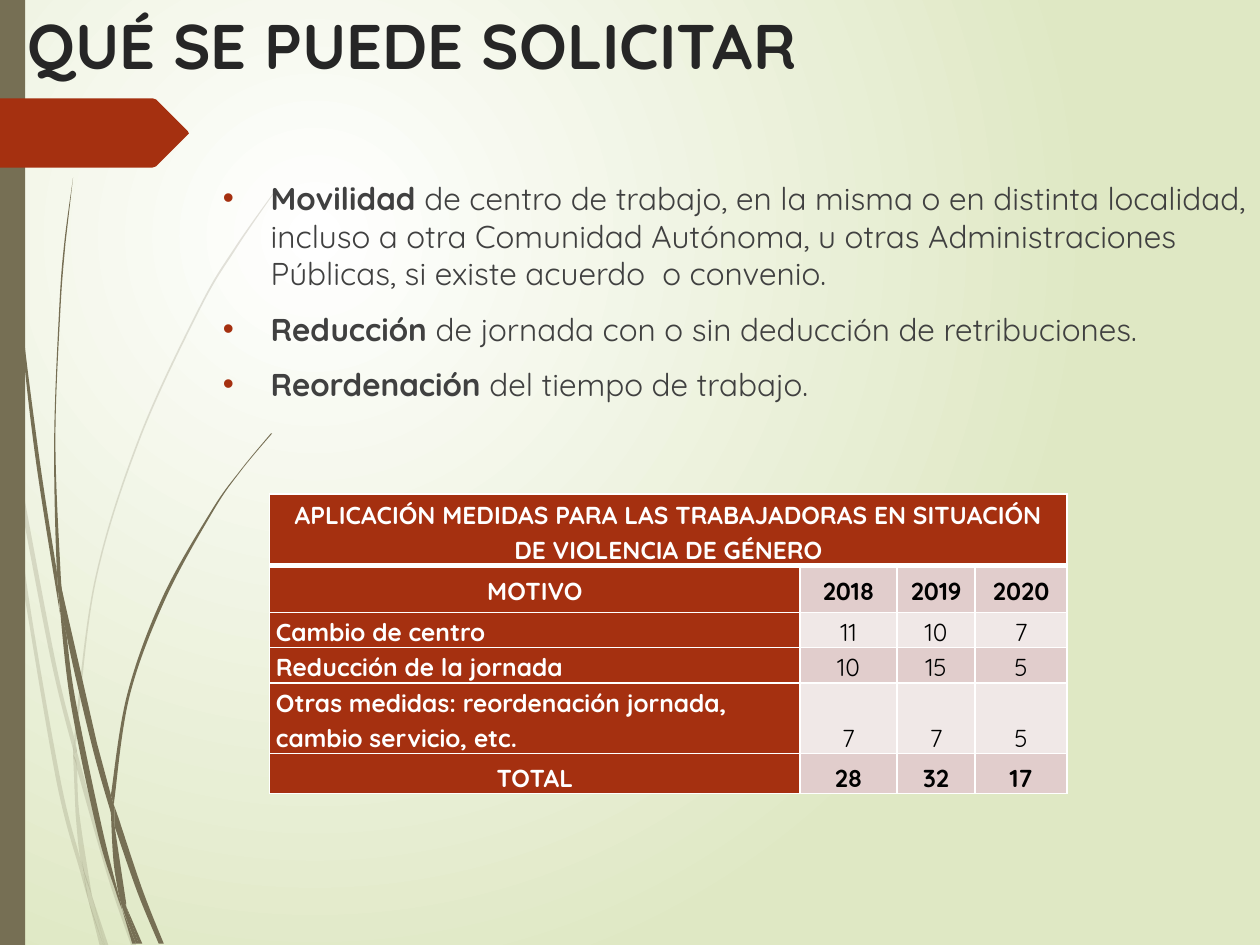
"""Build the slide on the measures that can be requested, with its table of cases."""
from lxml.etree import SubElement
from pptx import Presentation
from pptx.dml.color import RGBColor
from pptx.enum.shapes import MSO_SHAPE
from pptx.enum.text import MSO_ANCHOR, PP_ALIGN
from pptx.oxml.ns import qn
from pptx.util import Inches, Pt

COLORS = {
    "white": "FFFFFF", "black": "000000", "pale_green": "DFE8C4", "olive": "766F54",
    "red": "A53010", "title": "262626", "body": "404040",
    "band_dark": "E1CDCC", "band_light": "F0E8E7",
}
FONT = "Quicksand"
TITLE = "QUÉ SE PUEDE SOLICITAR"
MEASURES = [
    ("Movilidad ", "de centro de trabajo, en la misma o en distinta localidad, incluso a otra "
     "Comunidad Autónoma, u otras Administraciones Públicas, si existe acuerdo  o convenio."),
    ("Reducción", " de jornada con o sin deducción de retribuciones."),
    ("Reordenación", " del tiempo de trabajo."),
]
TABLE_ROWS = [
    ("APLICACIÓN MEDIDAS PARA LAS TRABAJADORAS EN SITUACIÓN DE VIOLENCIA DE GÉNERO", "", "", ""),
    ("MOTIVO", "2018", "2019", "2020"),
    ("Cambio de centro", "11", "10", "7"),
    ("Reducción de la jornada", "10", "15", "5"),
    ("Otras medidas: reordenación jornada, cambio servicio, etc.", "7", "7", "5"),
    ("TOTAL", "28", "32", "17"),
]
COLUMN_WIDTHS = [4.21, 0.77, 0.62, 0.73]
ROW_HEIGHTS = [0.57, 0.37, 0.28, 0.28, 0.56, 0.32]
HEADING_ROWS = (0, 1, 5)

PALE_BLADES = [
    ([(0.08, 3.5), (0.06, 3.22), (0, 2.82)], [(0, 2.99), (0.07, 3.44)]),
    ([(0.59, 5.86), (0.43, 5.2), (0.1, 3.45)], [(0.12, 3.76), (0.4, 5.22), (0.59, 5.99)]),
    ([(0.61, 5.96), (0.64, 6.07), (0.88, 6.92), (1.08, 7.5)],
     [(1.04, 7.5), (0.85, 6.94), (0.61, 6.1)]),
    ([(0.83, 7.5), (0.73, 7.11)], [(0.86, 7.5)]),
    ([(0.69, 7.07), (0.64, 6.83), (0.48, 6.19), (0.22, 4.69), (0.08, 3.5)],
     [(0.19, 4.7), (0.45, 6.21), (0.64, 6.93), (0.7, 7.14)]),
    ([(0.73, 7.11), (0.63, 6.46), (0.61, 6.08), (0.58, 5.99)],
     [(0.6, 6.46), (0.64, 6.83), (0.73, 7.11)]),
    ([(0.61, 5.96), (0.61, 5.84), (0.76, 4.62), (1.11, 3.49), (1.59, 2.45), (1.87, 1.98),
      (2.17, 1.54)],
     [(2.17, 1.53), (1.86, 1.97), (1.58, 2.44), (1.1, 3.48), (0.75, 4.61), (0.59, 5.84)]),
    ([(0.79, 7.5), (0.7, 7.14)], [(0.82, 7.5)]),
    ([(0.61, 6.1), (0.61, 5.96), (0.59, 5.86)], [(0.58, 5.99), (0.61, 6.08)]),
    ([(0.82, 7.5), (0.7, 7.14), (0.65, 6.83)], [(0.67, 6.92), (0.73, 7.11), (0.83, 7.5)]),
]
OLIVE_BLADES = [
    ([(0.47, 4.81), (0.46, 4.77), (0.27, 3.55), (0.14, 2.33), (0.05, 1.1), (0.02, 0)],
     [(0.03, 0), (0.06, 1.09), (0.15, 2.32), (0.3, 3.55), (0.45, 4.53)]),
    ([(0.88, 6.45), (0.73, 5.92), (0.53, 5.05), (0.5, 4.72)], [(0.77, 5.9), (0.88, 6.31)]),
    ([(0.91, 6.41), (0.94, 6.49), (1.13, 7.06), (1.3, 7.49)],
     [(1.26, 7.49), (1.09, 7.08), (0.91, 6.56)]),
    ([(0.97, 7.22), (0.92, 7.08), (0.77, 6.59), (0.56, 5.57), (0.47, 4.77)],
     [(0.53, 5.05), (0.6, 5.56), (0.81, 6.57), (0.96, 7.17)]),
    ([(0.49, 4.72), (0.45, 4.49), (0.43, 3.49), (0.47, 2.45), (0.51, 1.93), (0.58, 1.41)],
     [(0.52, 1.93), (0.48, 2.45), (0.44, 3.49), (0.48, 4.53), (0.5, 4.72)]),
    ([(1.1, 7.49), (1, 7.19)], [(1.13, 7.49)]),
    ([(0.53, 5.05), (0.47, 4.77), (0.45, 4.49)], [(0.5, 4.72), (0.53, 5.05)]),
    ([(0.91, 6.41), (0.91, 6.33), (1.03, 5.52), (1.31, 4.76), (1.69, 4.06), (1.91, 3.74),
      (2.16, 3.44)],
     [(2.15, 3.44), (1.91, 3.73), (1.68, 4.05), (1.29, 4.74), (1.01, 5.51), (0.88, 6.31)]),
    ([(1.05, 7.49), (0.97, 7.22)], [(1.08, 7.49)]),
    ([(1, 7.19), (0.91, 6.91), (0.88, 6.45)], [(0.91, 6.56), (1, 7.16)]),
    ([(0.91, 6.56), (0.88, 6.45), (0.88, 6.31)], [(0.91, 6.41)]),
    ([(1.08, 7.49), (0.96, 7.17), (0.91, 6.91)], [(1, 7.19), (1.1, 7.49)]),
]
ARROW = [(0, 0.78), (1.21, 0.78), (1.24, 0.79), (1.49, 1.04), (1.5, 1.06), (1.49, 1.07),
         (1.24, 1.32), (1.21, 1.33), (0, 1.33)]


def rgb(name):
    return RGBColor.from_string(COLORS[name])


def paint(shape, color, opacity=100):
    shape.shadow.inherit = False
    shape.fill.solid()
    shape.fill.fore_color.rgb = rgb(color)
    shape.line.fill.background()
    if opacity < 100:
        color_element = shape._element.spPr.find(f"{qn('a:solidFill')}/{qn('a:srgbClr')}")
        SubElement(color_element, qn("a:alpha"), val=str(opacity * 1000))


def add_outline(slide, points, color, opacity=100):
    corners = [(Inches(x), Inches(y)) for x, y in points]
    builder = slide.shapes.build_freeform(*corners[0])
    builder.add_line_segments(corners[1:], close=True)
    shape = builder.convert_to_shape()
    paint(shape, color, opacity)
    return shape


def bend_edge(segments, points):
    """Turn the straight segments between the points into smooth Bézier curves."""
    padded = [points[0], *points, points[-1]]
    for segment, a, b, c, d in zip(segments, padded, padded[1:], padded[2:], padded[3:]):
        segment.tag = qn("a:cubicBezTo")
        controls = [[q + (r - p) / 6 for p, q, r in zip(a, b, c)],
                    [r - (s - q) / 6 for q, r, s in zip(b, c, d)]]
        for position, (x, y) in enumerate(controls):
            point = SubElement(segment, qn("a:pt"), x=str(round(x)), y=str(round(y)))
            segment.insert(position, point)


def add_blade(slide, first_edge, second_edge, opacity):
    shape = add_outline(slide, first_edge + second_edge, "olive", opacity)
    outline = shape._element.find(f".//{qn('a:path')}")
    points = [(int(point.get("x")), int(point.get("y"))) for point in outline.iter(qn("a:pt"))]
    segments = outline.findall(qn("a:lnTo"))
    split = len(first_edge)
    bend_edge(segments[:split - 1], points[:split])
    bend_edge(segments[split:len(points) - 1], points[split:])


def add_run(paragraph, text, *, size, color, bold=False):
    run = paragraph.add_run()
    run.text = text
    run.font.name = FONT
    run.font.size = Pt(size)
    run.font.bold = bold
    run.font.color.rgb = rgb(color)


def add_text_frame(slide, *box):
    frame = slide.shapes.add_textbox(*map(Inches, box)).text_frame
    frame.word_wrap = True
    return frame


def set_background(slide):
    fill = slide.background.fill
    fill.gradient()
    for stop, color in zip(fill.gradient_stops, ("white", "pale_green")):
        stop.color.rgb = rgb(color)
    gradient = slide._element.cSld.find(f".//{qn('a:gradFill')}")
    gradient.remove(gradient.find(qn("a:lin")))
    circle = SubElement(gradient, qn("a:path"), path="circle")
    SubElement(circle, qn("a:fillToRect"), l="50000", t="50000", r="100000", b="100000")


def add_measures(slide):
    frame = add_text_frame(slide, 1.67, 1.37, 8.33, 4.76)
    for index, (keyword, detail) in enumerate(MEASURES):
        paragraph = frame.paragraphs[0] if index == 0 else frame.add_paragraph()
        paragraph.space_before = Pt(10)
        properties = paragraph._p.get_or_add_pPr()
        properties.set("marL", str(Inches(0.38)))
        properties.set("indent", str(-Inches(0.38)))
        bullet_color = SubElement(properties, qn("a:buClr"))
        SubElement(bullet_color, qn("a:srgbClr"), val=COLORS["red"])
        SubElement(properties, qn("a:buFont"), typeface="Arial")
        SubElement(properties, qn("a:buChar"), char="•")
        add_run(paragraph, keyword, size=18, color="body", bold=True)
        add_run(paragraph, detail, size=18, color="body")


def set_borders(cell, **widths):
    properties = cell._tc.get_or_add_tcPr()
    for side in "LRTB":
        line = SubElement(properties, qn(f"a:ln{side}"), w=str(Pt(widths.get(side, 1))))
        SubElement(SubElement(line, qn("a:solidFill")), qn("a:srgbClr"), val=COLORS["white"])


def add_cases_table(slide):
    table = slide.shapes.add_table(
        len(ROW_HEIGHTS), len(COLUMN_WIDTHS), Inches(2.14), Inches(3.92),
        Inches(sum(COLUMN_WIDTHS)), Inches(sum(ROW_HEIGHTS))).table
    table.first_row = table.horz_banding = False
    for column, width in zip(table.columns, COLUMN_WIDTHS):
        column.width = Inches(width)
    for r, (row, height) in enumerate(zip(table.rows, ROW_HEIGHTS)):
        row.height = Inches(height)
        for c, cell in enumerate(row.cells):
            is_label = c == 0 or r == 0
            set_borders(cell, **{0: {"B": 3}, 1: {"T": 3}}.get(r, {}))
            cell.fill.solid()
            band = "band_dark" if r % 2 else "band_light"
            cell.fill.fore_color.rgb = rgb("red" if is_label else band)
            cell.margin_left = cell.margin_right = Inches(0.05)
            cell.margin_top = cell.margin_bottom = 0
            cell.vertical_anchor = MSO_ANCHOR.MIDDLE if r == 1 else MSO_ANCHOR.BOTTOM
            paragraph = cell.text_frame.paragraphs[0]
            paragraph.line_spacing = 1.15
            centred = c > 0 or r in HEADING_ROWS
            paragraph.alignment = PP_ALIGN.CENTER if centred else PP_ALIGN.LEFT
            if TABLE_ROWS[r][c]:
                add_run(paragraph, TABLE_ROWS[r][c], size=14,
                        color="white" if is_label else "black",
                        bold=is_label or r in HEADING_ROWS)
    table.cell(0, 0).merge(table.cell(0, len(COLUMN_WIDTHS) - 1))


def main():
    presentation = Presentation()
    presentation.slide_width, presentation.slide_height = Inches(10), Inches(7.5)
    slide = presentation.slides.add_slide(presentation.slide_layouts[6])
    set_background(slide)
    for blades, opacity in ((PALE_BLADES, 20), (OLIVE_BLADES, 100)):
        for first_edge, second_edge in blades:
            add_blade(slide, first_edge, second_edge, opacity)
    side_bar = slide.shapes.add_shape(MSO_SHAPE.RECTANGLE, 0, 0, Inches(0.2), Inches(7.5))
    paint(side_bar, "olive")
    add_outline(slide, ARROW, "red")
    title = add_text_frame(slide, 0.12, 0, 8.62, 1.45).paragraphs[0]
    add_run(title, TITLE, size=36, color="title", bold=True)
    add_measures(slide)
    add_cases_table(slide)
    presentation.save("out.pptx")


if __name__ == "__main__":
    main()
